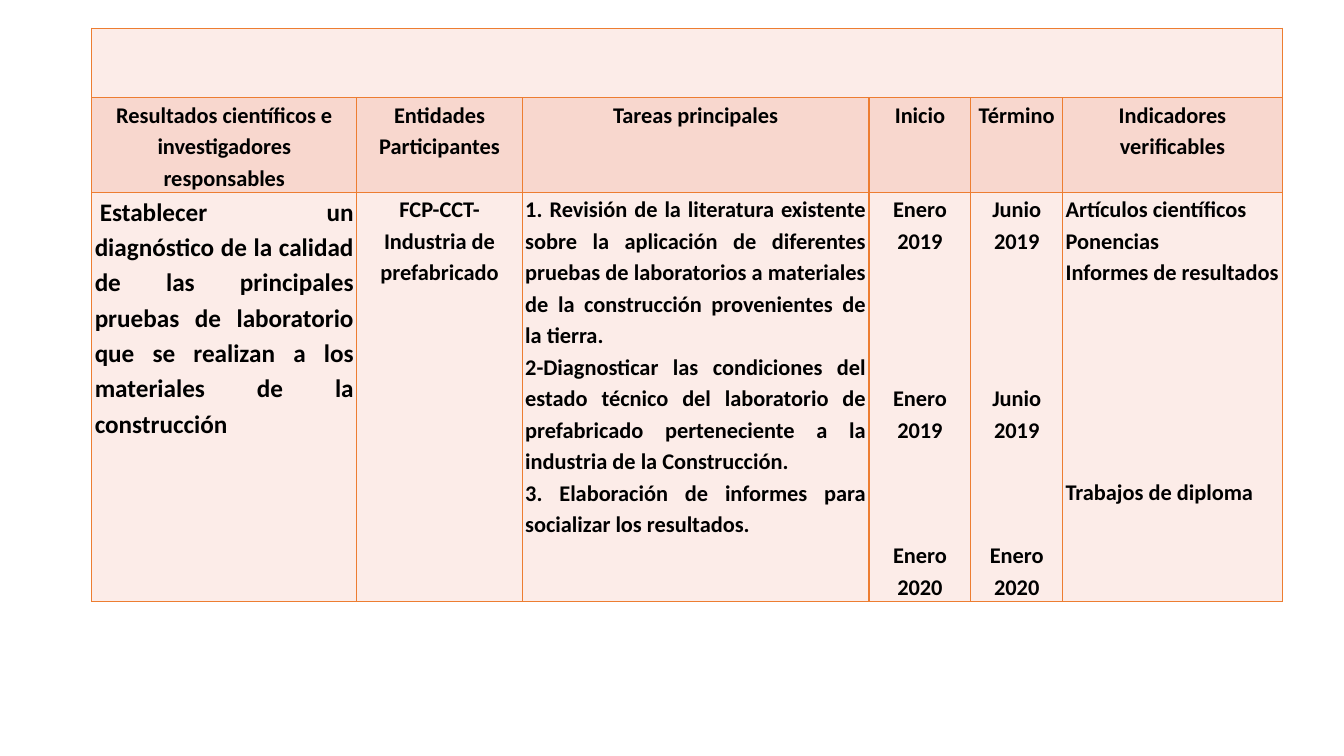
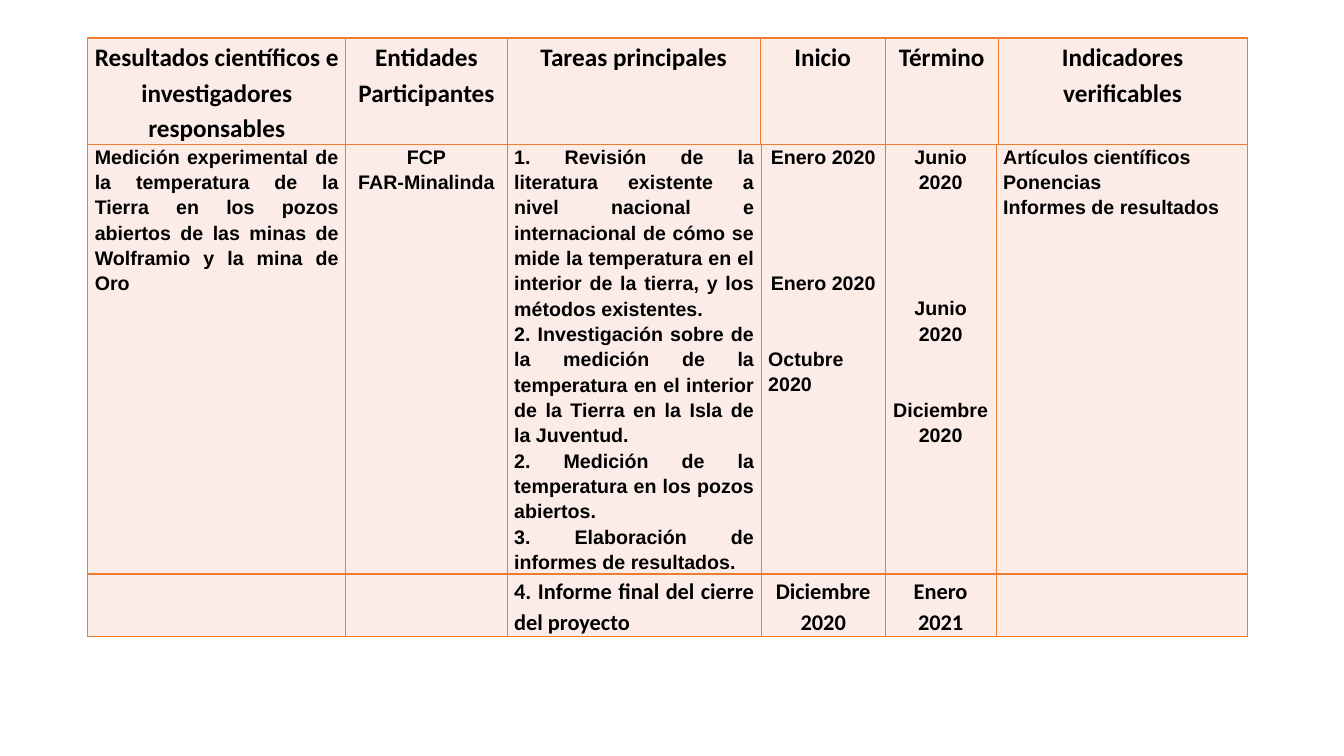
from dataclasses import dataclass

from lxml.etree import SubElement
from pptx import Presentation
from pptx.dml.color import RGBColor
from pptx.enum.text import PP_ALIGN
from pptx.oxml.ns import qn
from pptx.util import Emu, Pt

PX = 9144  # EMU in one px, 100 px to the inch
CENTER, JUSTIFY = PP_ALIGN.CENTER, PP_ALIGN.JUSTIFY


@dataclass(frozen=True)
class Theme:
    ink: str = "000000"
    border: str = "ED7D31"
    pale: str = "FCECE8"
    strong: str = "F8D7CE"
    main_font: str = "Calibri"
    plain_font: str = "Arial"
    small: int = 14
    medium: int = 16
    large: int = 18
    line_spacing: float = 1.15
    thin: float = 1
    thick: float = 1.5


THEME = Theme()
LINE_HEIGHT = {THEME.main_font: 1.22, THEME.plain_font: 1.12}


@dataclass
class Item:
    """One paragraph; skip counts the lines left free above it."""
    text: str
    skip: int = 0
    align: PP_ALIGN | None = None
    size: int | None = None
    indent: int = 0


@dataclass
class Row:
    height: int
    cells: list
    aligns: tuple
    fill: str = THEME.pale
    size: int = THEME.medium
    font: str = THEME.main_font
    top: float = THEME.thin
    inset: int = 3
    merged: bool = False


HEADINGS = [
    ["Resultados científicos e investigadores responsables"],
    ["Entidades", "Participantes"],
    ["Tareas principales"],
    ["Inicio"],
    ["Término"],
    ["Indicadores verificables"],
]
HEADING_ALIGNS = (CENTER,) * 6
BODY_ALIGNS = (JUSTIFY, CENTER, JUSTIFY, CENTER, CENTER, JUSTIFY)

DIAGNOSIS = [
    [Item("Establecer un diagnóstico de la calidad de las principales pruebas "
          "de laboratorio que se realizan a los materiales de la construcción",
          size=THEME.large, indent=5)],
    ["FCP-CCT-", "Industria de prefabricado"],
    ["1. Revisión de la literatura existente sobre la aplicación de diferentes "
     "pruebas de laboratorios a materiales de la construcción provenientes de la tierra.",
     "2-Diagnosticar las condiciones del estado técnico del laboratorio de "
     "prefabricado perteneciente a la industria de la Construcción.",
     "3. Elaboración de informes para socializar los resultados."],
    ["Enero 2019", Item("Enero 2019", skip=4), Item("Enero 2020", skip=3)],
    ["Junio 2019", Item("Junio 2019", skip=4), Item("Enero 2020", skip=3)],
    ["Artículos científicos", "Ponencias", "Informes de resultados",
     Item("Trabajos de diploma", skip=6)],
]

MEASUREMENT = [
    ["Medición experimental de la temperatura de la Tierra en los pozos abiertos "
     "de las minas de Wolframio y la mina de Oro"],
    ["FCP", "FAR-Minalinda"],
    ["1. Revisión de la literatura existente a nivel nacional e internacional de "
     "cómo se mide la temperatura en el interior de la tierra, y los métodos existentes.",
     "2. Investigación sobre de la medición de la temperatura en el interior de la "
     "Tierra en la Isla de la Juventud.",
     "2. Medición de la temperatura en los pozos abiertos.",
     "3. Elaboración de informes de resultados."],
    ["Enero 2020", Item("Enero 2020", skip=4),
     Item("Octubre 2020", skip=2, align=JUSTIFY)],
    ["Junio 2020", Item("Junio 2020", skip=4), Item("Diciembre 2020", skip=2)],
    ["Artículos científicos", "Ponencias", "Informes de resultados"],
]

CLOSING = [
    [], [], ["4. Informe final del cierre del proyecto"],
    ["Diciembre 2020"], ["Enero 2021"], [],
]


def px(length):
    return Emu(length * PX)


def write(paragraph, text, *, size, font, align, skip=0, indent=0):
    paragraph.alignment = align
    paragraph.line_spacing = THEME.line_spacing
    if skip:
        line = size * LINE_HEIGHT[font] * THEME.line_spacing
        paragraph.space_before = Pt(round(skip * line, 1))
    if indent:
        paragraph._p.get_or_add_pPr().set("indent", str(px(indent)))
    run = paragraph.add_run()
    run.text = text
    run.font.size = Pt(size)
    run.font.name = font
    run.font.bold = True
    run.font.color.rgb = RGBColor.from_string(THEME.ink)


def draw_borders(cell, top):
    properties = cell._tc.get_or_add_tcPr()
    weights = {"lnL": THEME.thin, "lnR": THEME.thin, "lnT": top, "lnB": THEME.thin}
    for side, weight in weights.items():
        line = SubElement(properties, qn(f"a:{side}"), w=str(Pt(weight)))
        fill = SubElement(line, qn("a:solidFill"))
        SubElement(fill, qn("a:srgbClr"), val=THEME.border)


def fill_cell(cell, items, row, align):
    draw_borders(cell, row.top)
    cell.fill.solid()
    cell.fill.fore_color.rgb = RGBColor.from_string(row.fill)
    cell.margin_left = cell.margin_right = px(row.inset)
    cell.margin_top = cell.margin_bottom = 0
    frame = cell.text_frame
    for number, entry in enumerate(items):
        item = entry if isinstance(entry, Item) else Item(entry)
        paragraph = frame.add_paragraph() if number else frame.paragraphs[0]
        write(paragraph, item.text, size=item.size or row.size, font=row.font,
              align=item.align or align, skip=item.skip, indent=item.indent)


def add_plan_table(slide, left, top, widths, rows):
    heights = [row.height for row in rows]
    plan = slide.shapes.add_table(
        len(rows), len(widths), px(left), px(top),
        px(sum(widths)), px(sum(heights))).table
    plan.first_row = plan.horz_banding = False
    for column, width in zip(plan.columns, widths):
        column.width = px(width)
    for number, row in enumerate(rows):
        plan.rows[number].height = px(row.height)
        cells = list(plan.rows[number].cells)
        for cell, items, align in zip(cells, row.cells, row.aligns):
            fill_cell(cell, items, row, align)
        if row.merged:
            cells[0].merge(cells[-1])


def build_diagnosis_slide(slide):
    # Empty banner, headings and one result in a single table
    add_plan_table(slide, 91, 28, (263, 164, 344, 101, 91, 218), [
        Row(69, [[]] * 6, HEADING_ALIGNS, merged=True),
        Row(94, HEADINGS, HEADING_ALIGNS, fill=THEME.strong),
        Row(406, DIAGNOSIS, BODY_ALIGNS, top=THEME.thick),
    ])


def build_measurement_slide(slide):
    # Result and closing report
    add_plan_table(slide, 87, 142, (256, 160, 252, 123, 110, 249), [
        Row(427, MEASUREMENT, BODY_ALIGNS, size=THEME.small,
            font=THEME.plain_font, inset=7),
        Row(62, CLOSING, BODY_ALIGNS, top=THEME.thick, inset=7),
    ])
    # Headings
    add_plan_table(slide, 87, 38, (256, 160, 251, 124, 112, 247), [
        Row(103, HEADINGS, HEADING_ALIGNS, size=THEME.large, top=THEME.thick),
    ])


def main():
    deck = Presentation()
    deck.slide_width, deck.slide_height = px(1333), px(750)
    blank = deck.slide_layouts[6]
    for build in (build_diagnosis_slide, build_measurement_slide):
        build(deck.slides.add_slide(blank))
    deck.save("out.pptx")


if __name__ == "__main__":
    main()
